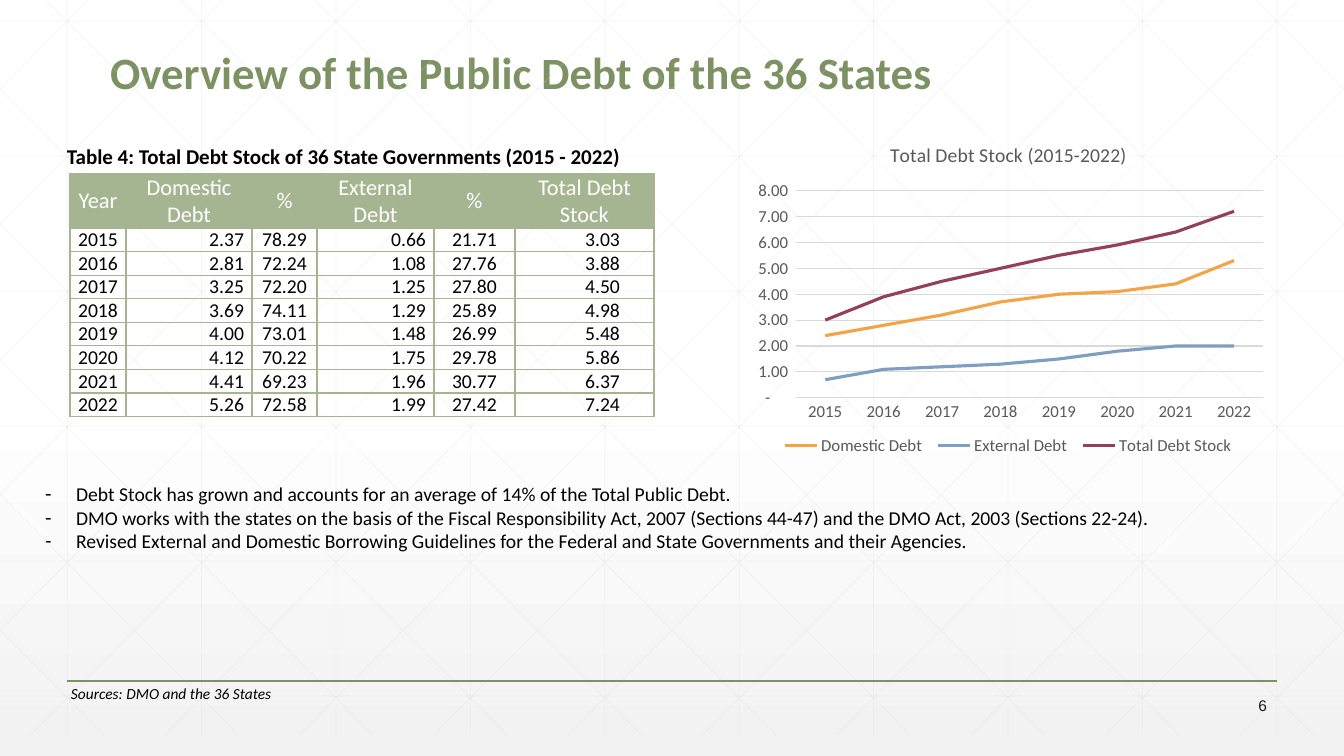
from lxml.etree import SubElement
from pptx import Presentation
from pptx.chart.data import CategoryChartData
from pptx.dml.color import RGBColor
from pptx.enum.chart import XL_CHART_TYPE, XL_LEGEND_POSITION, XL_TICK_MARK
from pptx.enum.shapes import MSO_CONNECTOR
from pptx.enum.text import MSO_ANCHOR, MSO_AUTO_SIZE, PP_ALIGN
from pptx.oxml import parse_xml
from pptx.oxml.ns import nsdecls, qn
from pptx.util import Pt

THEME = {
    "font": "Calibri", "number_font": "Arial",
    "title": "7D9263", "text": "000000", "white": "FFFFFF", "shade": "F2F2F2",
    "table": "A5B592", "grid": "D9D9D9", "chart_text": "595959", "number": "1A1A1A",
    "series": ["F3A447", "809EC2", "94405D"],
    "title_size": 32, "caption_size": 15, "header_size": 16, "body_size": 14,
    "chart_title_size": 14, "chart_size": 12, "small_size": 11,
}
PX = 914400 / 100.8
WIDTH, HEIGHT = 1344, 756
GRID_BOTTOM = 735


def add_line(left, top, right, bottom, color, points, alpha=100):
    ends = [round(value * PX) for value in (left, top, right, bottom)]
    line = slide.shapes.add_connector(MSO_CONNECTOR.STRAIGHT, *ends)
    line.line.color.rgb = RGBColor.from_string(color)
    line.line.width = Pt(points)
    if alpha < 100:
        rgb = line.line.fill._xPr.find(".//" + qn("a:srgbClr"))
        SubElement(rgb, qn("a:alpha")).set("val", str(alpha * 1000))
    SubElement(line._element.spPr, qn("a:effectLst"))


def write(paragraph, text, size, color, bold=False, italic=False, font=THEME["font"]):
    run = paragraph.add_run()
    run.text = text
    run.font.name = font
    run.font.size = Pt(size)
    run.font.bold = bold
    run.font.italic = italic
    run.font.color.rgb = RGBColor.from_string(color)


presentation = Presentation()
presentation.slide_width = round(WIDTH * PX)
presentation.slide_height = round(HEIGHT * PX)
slide = presentation.slides.add_slide(presentation.slide_layouts[1])

background = slide.background.fill
background.gradient()
background.gradient_angle = 270
for stop, position, color in zip(background.gradient_stops, (0.53, 1), ("white", "shade")):
    stop.position = position
    stop.color.rgb = RGBColor.from_string(THEME[color])

step = WIDTH / 10
for column in range(10):
    x = step * (column + 0.5)
    add_line(x, 0, x, GRID_BOTTOM, THEME["grid"], 0.5, 25)
for row in range(6):
    y = 21 + 135 * row
    add_line(0, y, WIDTH, y, THEME["grid"], 0.5, 25)
slope = 730 / GRID_BOTTOM
for diagonal in range(-5, 10):
    start = 46 + step * diagonal
    top = max(0, -start / slope)
    bottom = min(GRID_BOTTOM, (WIDTH - start) / slope)
    left, right = start + top * slope, start + bottom * slope
    add_line(left, top, right, bottom, THEME["grid"], 0.5, 25)
    add_line(WIDTH - left, top, WIDTH - right, bottom, THEME["grid"], 0.5, 25)
add_line(67, 681, 1277, 681, THEME["title"], 1)

title = slide.shapes.title
title.left, title.top, title.width, title.height = [round(v * PX) for v in (100, 24, 1058, 80)]
title.text_frame.auto_size = MSO_AUTO_SIZE.NONE
title.text_frame.vertical_anchor = MSO_ANCHOR.BOTTOM
paragraph = title.text_frame.paragraphs[0]
paragraph.alignment = PP_ALIGN.LEFT
paragraph.line_spacing = 0.9
write(paragraph, "Overview of the Public Debt of the 36 States",
      THEME["title_size"], THEME["title"], bold=True)

labels = [
    ((57, 139, 621, 35), "Table 4: Total Debt Stock of 36 State Governments (2015 - 2022)",
     PP_ALIGN.LEFT, MSO_ANCHOR.TOP,
     dict(size=THEME["caption_size"], color=THEME["text"], bold=True)),
    ((61, 679, 380, 21), "Sources: DMO and the 36 States", PP_ALIGN.LEFT, MSO_ANCHOR.TOP,
     dict(size=THEME["small_size"], color=THEME["text"], italic=True)),
    ((1176, 693, 101, 24), "6", PP_ALIGN.RIGHT, MSO_ANCHOR.MIDDLE,
     dict(size=THEME["small_size"], color=THEME["number"], font=THEME["number_font"])),
]
for box, text, alignment, anchor, style in labels:
    frame = slide.shapes.add_textbox(*[round(v * PX) for v in box]).text_frame
    frame.word_wrap = True
    frame.vertical_anchor = anchor
    frame.paragraphs[0].alignment = alignment
    write(frame.paragraphs[0], text, **style)

headers = ["Year", "Domestic Debt", "%", "External Debt", "%", "Total Debt Stock"]
debt_rows = [
    ("2015", 2.37, 78.29, 0.66, 21.71, 3.03),
    ("2016", 2.81, 72.24, 1.08, 27.76, 3.88),
    ("2017", 3.25, 72.20, 1.25, 27.80, 4.50),
    ("2018", 3.69, 74.11, 1.29, 25.89, 4.98),
    ("2019", 4.00, 73.01, 1.48, 26.99, 5.48),
    ("2020", 4.12, 70.22, 1.75, 29.78, 5.86),
    ("2021", 4.41, 69.23, 1.96, 30.77, 6.37),
    ("2022", 5.26, 72.58, 1.99, 27.42, 7.24),
]
column_widths = [56, 126, 65, 117, 81, 139]
right_margins = {1: 8, 3: 8, 5: 34}
table = slide.shapes.add_table(
    len(debt_rows) + 1, len(headers),
    *[round(v * PX) for v in (70, 174, sum(column_widths), 242)]).table
table.first_row = False
table.horz_banding = False
for column, width in zip(table.columns, column_widths):
    column.width = round(width * PX)
for row_index, values in enumerate([headers] + debt_rows):
    is_header = row_index == 0
    table.rows[row_index].height = round((54 if is_header else 23) * PX)
    for column_index, value in enumerate(values):
        cell = table.cell(row_index, column_index)
        cell.margin_left = cell.margin_right = cell.margin_top = cell.margin_bottom = 0
        cell.vertical_anchor = MSO_ANCHOR.MIDDLE
        for side in ("a:lnL", "a:lnR", "a:lnT", "a:lnB"):
            border = SubElement(cell._tc.get_or_add_tcPr(), qn(side), w=str(Pt(1)))
            SubElement(SubElement(border, qn("a:solidFill")), qn("a:srgbClr"), val=THEME["table"])
        paragraph = cell.text_frame.paragraphs[0]
        paragraph.alignment = PP_ALIGN.CENTER
        if is_header:
            cell.fill.solid()
            cell.fill.fore_color.rgb = RGBColor.from_string(THEME["table"])
            write(paragraph, value, THEME["header_size"], THEME["white"])
        else:
            cell.fill.background()
            if column_index in right_margins:
                paragraph.alignment = PP_ALIGN.RIGHT
                cell.margin_right = round(right_margins[column_index] * PX)
            text = value if column_index == 0 else f"{value:.2f}"
            write(paragraph, text, THEME["body_size"], THEME["text"])

chart_data = CategoryChartData(number_format="0.0")
chart_data.categories = [row[0] for row in debt_rows]
for column_index in right_margins:
    chart_data.add_series(headers[column_index], [round(row[column_index], 1) for row in debt_rows])
chart = slide.shapes.add_chart(
    XL_CHART_TYPE.LINE, *[round(v * PX) for v in (743, 126, 531, 340)], chart_data).chart
chart.font.name = THEME["font"]
chart.font.size = Pt(THEME["chart_size"])
chart.font.color.rgb = RGBColor.from_string(THEME["chart_text"])
chart.has_title = True
write(chart.chart_title.text_frame.paragraphs[0], "Total Debt Stock (2015-2022)",
      THEME["chart_title_size"], THEME["chart_text"])
chart.chart_title.include_in_layout = False
chart.has_legend = True
chart.legend.position = XL_LEGEND_POSITION.BOTTOM
chart.legend.include_in_layout = False
chart.plots[0].vary_by_categories = False
for series, color in zip(chart.plots[0].series, THEME["series"]):
    series.smooth = False
    series.format.line.color.rgb = RGBColor.from_string(color)
    series.format.line.width = Pt(2.25)
value_axis, category_axis = chart.value_axis, chart.category_axis
value_axis.minimum_scale, value_axis.maximum_scale, value_axis.major_unit = 0, 8, 1
value_axis.tick_labels.number_format = '_(* #,##0.00_);_(* \\(#,##0.00\\);_(* "-"??_);_(@_)'
value_axis.tick_labels.number_format_is_linked = False
value_axis.format.line.fill.background()
for axis in (value_axis, category_axis):
    axis.major_tick_mark = axis.minor_tick_mark = XL_TICK_MARK.NONE
for line_format in (value_axis.major_gridlines.format, category_axis.format):
    line_format.line.color.rgb = RGBColor.from_string(THEME["grid"])
    line_format.line.width = Pt(0.75)
plot_area = chart._chartSpace.find(".//" + qn("c:plotArea"))
for part, index, target, box in (
        (plot_area, 0, '<c:layoutTarget val="inner"/>', dict(x=0.1, y=0.19, w=0.88, h=0.61)),
        (chart.legend._element, 1, "", dict(x=0.06, y=0.9, w=0.88, h=0.08))):
    for layout in part.findall(qn("c:layout")):
        part.remove(layout)
    modes = '<c:xMode val="edge"/><c:yMode val="edge"/>'
    sizes = "".join(f'<c:{name} val="{value}"/>' for name, value in box.items())
    part.insert(index, parse_xml(
        f'<c:layout {nsdecls("c")}><c:manualLayout>{target}{modes}{sizes}'
        '</c:manualLayout></c:layout>'))

body = slide.placeholders[1]
body.left, body.top, body.width, body.height = [round(v * PX) for v in (35, 477, 1240, 105)]
body.text_frame.auto_size = MSO_AUTO_SIZE.NONE
points = [
    "Debt Stock has grown and accounts for an average of 14% of the Total Public Debt.",
    "DMO works with the states on the basis of the Fiscal Responsibility Act, 2007 "
    "(Sections 44-47) and the DMO Act, 2003 (Sections 22-24).",
    "Revised External and Domestic Borrowing Guidelines for the Federal and State "
    "Governments and their Agencies.",
]
for index, point in enumerate(points):
    paragraph = body.text_frame.add_paragraph() if index else body.text_frame.paragraphs[0]
    paragraph.space_before = Pt(0)
    properties = paragraph._p.get_or_add_pPr()
    properties.set("marL", str(round(31 * PX)))
    properties.set("indent", str(round(-31 * PX)))
    SubElement(properties, qn("a:buChar"), char="-")
    write(paragraph, point, THEME["body_size"], THEME["text"])

presentation.save("out.pptx")
